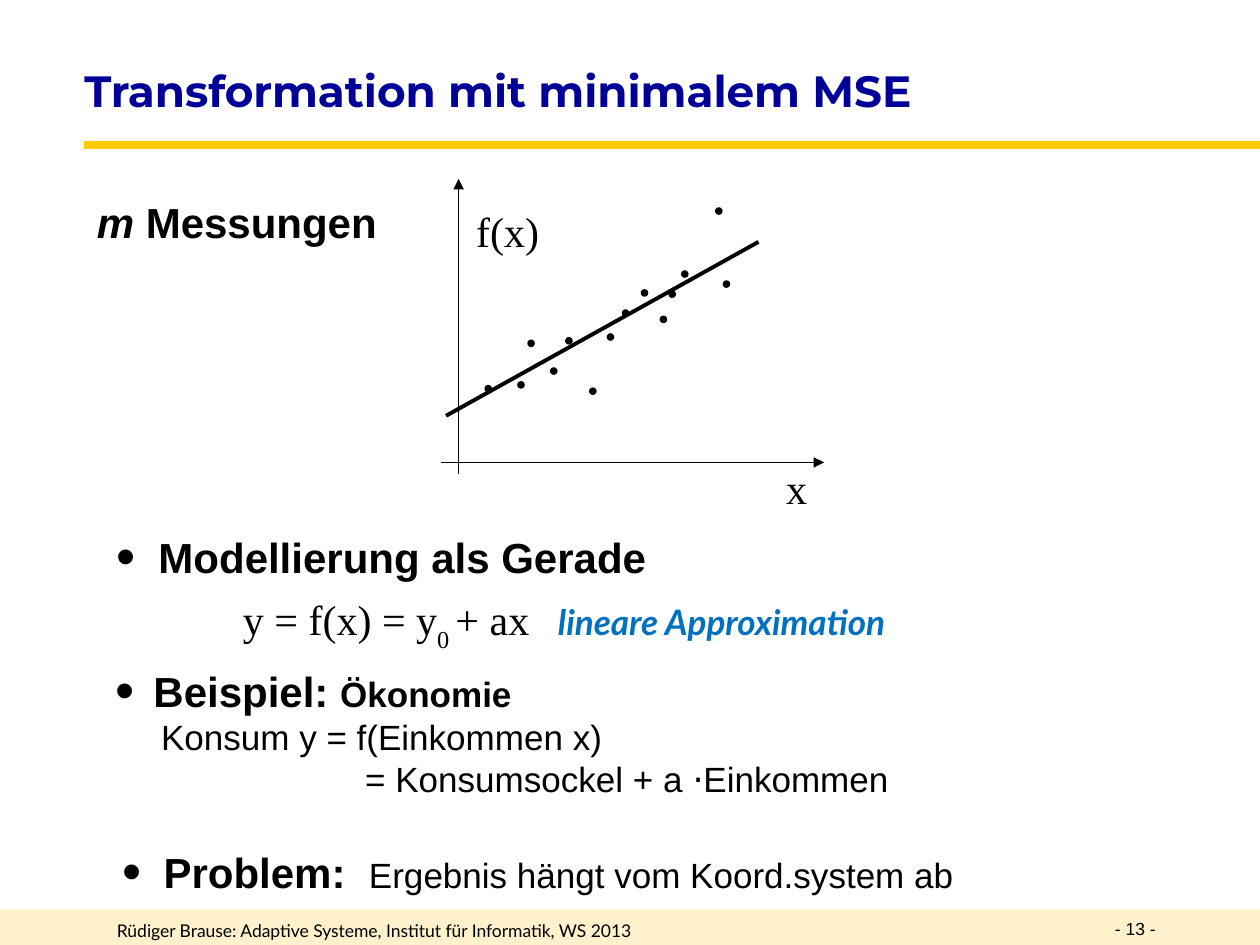
"""Build the slide on the linear transformation with minimal MSE."""
from lxml.etree import SubElement
from pptx import Presentation
from pptx.dml.color import RGBColor
from pptx.enum.shapes import MSO_CONNECTOR, MSO_SHAPE
from pptx.enum.text import MSO_ANCHOR
from pptx.oxml.ns import qn
from pptx.util import Inches, Pt

BLACK = RGBColor(0x00, 0x00, 0x00)
NAVY = RGBColor(0x00, 0x00, 0x99)
BLUE = RGBColor(0x00, 0x70, 0xC0)
GOLD = RGBColor(0xFF, 0xCC, 0x00)
CREAM = RGBColor(0xFF, 0xE4, 0x99)

HEADING = {"name": "Arial", "size": Pt(24), "bold": True}
DETAIL = {"name": "Arial", "size": Pt(20)}
FORMULA = {"name": "Times New Roman", "size": Pt(24)}
FOOTER = {"size": Pt(10)}
ACCENT = {"name": "Lato", "size": Pt(20), "bold": True, "italic": True}

TITLE = {
    "box": (0.67, 0.44, 7.24, 0.55), "wrap": False, "inset": 0,
    "paragraphs": [{"runs": [("Transformation mit minimalem MSE",
                              {"name": "Montserrat", "size": Pt(25), "bold": True, "color": NAVY})]}],
}
TEXTS = [
    {"box": (0.83, 7.25, 5.42, 0.25), "paragraphs": [
        {"runs": [("Rüdiger Brause: Adaptive Systeme, Institut für Informatik, WS 2013",
                   {**FOOTER, "name": "Lato"})]}]},
    {"box": (8.75, 7.24, 0.75, 0.26), "paragraphs": [
        {"runs": [("- 13 -", {**FOOTER, "name": "Arial"})]}]},
    {"box": (0.67, 1.39, 9.33, 0.58), "paragraphs": [
        {"spacing": 1.3, "runs": [("m", {**HEADING, "italic": True}), (" Messungen", HEADING)]}]},
    {"box": (0.83, 4.17, 8.97, 1.25), "paragraphs": [
        {"bullet": True, "margin": 0.33, "runs": [("Modellierung als Gerade", HEADING)]},
        {"spacing": 1.2, "margin": 1, "tab": 4, "runs": [
            ("y = f(x) = y", FORMULA), ("0 ", {**FORMULA, "baseline": -30}),
            ("+ ax\t", FORMULA), ("lineare Approximation", {**ACCENT, "color": BLUE})]}]},
    {"box": (0.82, 5.23, 7.83, 1.33), "paragraphs": [
        {"bullet": True, "margin": 0.3, "runs": [
            ("Beispiel: ", HEADING), ("Ökonomie", {**DETAIL, "bold": True})]},
        {"margin": 0.36, "runs": [("Konsum y = f(Einkommen x)", DETAIL)]},
        {"margin": 1.98, "runs": [("= Konsumsockel + a ⋅Einkommen", DETAIL)]}]},
    {"box": (0.87, 6.67, 7.05, 0.62), "paragraphs": [
        {"bullet": True, "margin": 0.33, "tab": 1.96, "runs": [
            ("Problem:\t", HEADING), ("Ergebnis hängt vom Koord.system ab", DETAIL)]}]},
]
AXIS_LABELS = [
    {"box": box, "paragraphs": [{"runs": [(label, FORMULA)]}]}
    for label, box in [("f(x)", (3.68, 1.58, 0.79, 0.5)), ("x", (6.14, 3.62, 0.36, 0.5))]
]
PLOT_LINES = [
    ((3.5, 3.67), (6.54, 3.67), 1, True),
    ((3.64, 3.76), (3.64, 1.42), 1, True),
    ((3.54, 3.3), (6.02, 1.92), 2.25, False),
]
MEASUREMENTS = [
    (4.37, 2.92), (3.85, 3.06), (4.49, 2.68), (4.82, 2.65), (4.94, 2.46), (5.09, 2.3), (5.24, 2.51),
    (5.31, 2.31), (5.41, 2.15), (5.74, 2.23), (4.11, 3.03), (4.19, 2.7), (4.68, 3.08), (5.68, 1.65),
]
DOT_SIZE = 0.05


def add_line(shapes, start, end, color, width, arrow=False):
    connector = shapes.add_connector(
        MSO_CONNECTOR.STRAIGHT, *[Inches(value) for value in (*start, *end)])
    connector.line.color.rgb = color
    connector.line.width = Pt(width)
    properties = connector._element.spPr
    if arrow:
        SubElement(properties.find(qn("a:ln")), qn("a:tailEnd"), type="triangle")
    SubElement(properties, qn("a:effectLst"))


def add_filled(shapes, kind, box, color):
    shape = shapes.add_shape(kind, *[Inches(value) for value in box])
    shape.shadow.inherit = False
    shape.fill.solid()
    shape.fill.fore_color.rgb = color
    return shape


def format_paragraph(paragraph, content):
    properties = paragraph._p.get_or_add_pPr()
    margin = Inches(content.get("margin", 0))
    bullet = content.get("bullet", False)
    properties.set("marL", str(margin))
    properties.set("indent", str(-margin if bullet else 0))
    if bullet:
        SubElement(properties, qn("a:buSzPct"), val="130000")
        SubElement(properties, qn("a:buFont"), typeface="Arial")
        SubElement(properties, qn("a:buChar"), char="•")
    if "tab" in content:
        tabs = SubElement(properties, qn("a:tabLst"))
        SubElement(tabs, qn("a:tab"), pos=str(Inches(content["tab"])), algn="l")
    if "spacing" in content:
        paragraph.line_spacing = content["spacing"]


def add_run(paragraph, text, style):
    run = paragraph.add_run()
    run.text = text
    values = dict(style)
    run.font.color.rgb = values.pop("color", BLACK)
    baseline = values.pop("baseline", None)
    for attribute, value in values.items():
        setattr(run.font, attribute, value)
    if baseline:
        run._r.get_or_add_rPr().set("baseline", str(baseline * 1000))


def add_text(shapes, content, anchor=MSO_ANCHOR.TOP):
    frame = shapes.add_textbox(*[Inches(value) for value in content["box"]]).text_frame
    frame.word_wrap = content.get("wrap", True)
    frame.vertical_anchor = anchor
    frame.margin_left = Inches(content.get("inset", 0.1))
    for index, item in enumerate(content["paragraphs"]):
        paragraph = frame.add_paragraph() if index else frame.paragraphs[0]
        format_paragraph(paragraph, item)
        for text, style in item["runs"]:
            add_run(paragraph, text, style)


def add_plot(slide):
    shapes = slide.shapes.add_group_shape().shapes
    for start, end, width, arrow in PLOT_LINES:
        add_line(shapes, start, end, BLACK, width, arrow)
    for left, top in MEASUREMENTS:
        dot = add_filled(shapes, MSO_SHAPE.OVAL, (left, top, DOT_SIZE, DOT_SIZE), BLACK)
        dot.line.color.rgb = BLACK
        dot.line.width = Pt(0.75)
    for label in AXIS_LABELS:
        add_text(shapes, label)


def main():
    presentation = Presentation()
    presentation.slide_width = Inches(10)
    presentation.slide_height = Inches(7.5)
    slide = presentation.slides.add_slide(presentation.slide_layouts[6])
    band = add_filled(slide.shapes, MSO_SHAPE.RECTANGLE, (0, 7.22, 10, 0.28), CREAM)
    band.line.fill.background()
    band_color = band._element.spPr.find(qn("a:solidFill")).find(qn("a:srgbClr"))
    SubElement(band_color, qn("a:alpha"), val="50000")
    add_line(slide.shapes, (0.67, 1.15), (10, 1.15), GOLD, 4.5)
    add_text(slide.shapes, TITLE, MSO_ANCHOR.MIDDLE)
    add_plot(slide)
    for content in TEXTS:
        add_text(slide.shapes, content)
    presentation.save("out.pptx")


if __name__ == "__main__":
    main()
